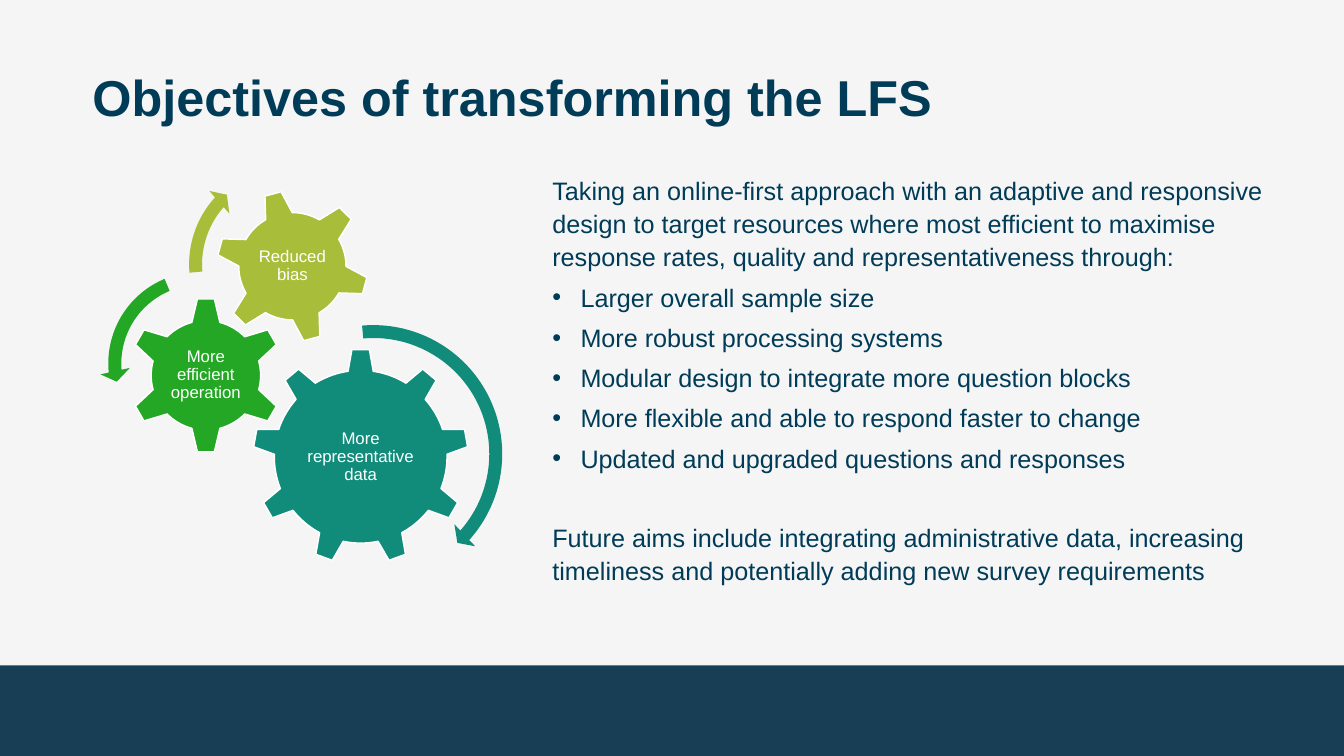
import pptx
import pptx.dml.color
import pptx.enum.shapes
import pptx.enum.text
import pptx.oxml.ns
import pptx.util
from lxml import etree

Cm = pptx.util.Cm
Pt = pptx.util.Pt
SHAPES = pptx.enum.shapes.MSO_SHAPE
ALIGN = pptx.enum.text.PP_ALIGN
ANCHOR = pptx.enum.text.MSO_ANCHOR

COLOURS = {
    "background": "F5F5F6",
    "footer": "183E56",
    "title": "003C57",
    "body": "003B57",
    "teal": "118C7B",
    "green": "23A724",
    "lime": "A8BD3A",
    "white": "FFFFFF",
}
INTRODUCTION = (
    "Taking an online-first approach with an adaptive and responsive design to target "
    "resources where most efficient to maximise response rates, quality and "
    "representativeness through:"
)
OBJECTIVES = [
    "Larger overall sample size",
    "More robust processing systems",
    "Modular design to integrate more question blocks",
    "More flexible and able to respond faster to change",
    "Updated and upgraded questions and responses",
]
FUTURE = (
    "Future aims include integrating administrative data, increasing timeliness and "
    "potentially adding new survey requirements"
)
GEARS = [
    ("More representative data", "teal", SHAPES.GEAR_9, (6.59, 7.61), 5.44, 0, (3.25, 2.79)),
    ("More efficient operation", "green", SHAPES.GEAR_6, (2.69, 5.56), 3.94, 0, (1.96, 1.96)),
    ("Reduced bias", "lime", SHAPES.GEAR_6, (4.87, 2.81), 3.86, 345, (2.16, 2.16)),
]
ARROWS = [
    ("teal", SHAPES.CIRCULAR_ARROW, (6.91, 7.54), 6.93, (0.047, 2.99, 24.99, 158.99, 0.055)),
    ("green", SHAPES.LEFT_CIRCULAR_ARROW, (2.54, 5.26), 5.05, (0.065, 4.3, 104.89, 148.38, 0.075)),
    ("lime", SHAPES.CIRCULAR_ARROW, (4.77, 2.76), 5.44, (0.06, 3.94, 133.14, 105.08, 0.07)),
]


def colour(name):
    """Return the named colour."""
    return pptx.dml.color.RGBColor.from_string(COLOURS[name])


def centred_box(box, centre, width, height):
    """Return the lengths of a rectangle centred on a point of the box."""
    left = box[0] + centre[0] - width / 2
    top = box[1] + centre[1] - height / 2
    return Cm(left), Cm(top), Cm(width), Cm(height)


def add_filled(slide, kind, lengths, fill, line=None):
    """Add a flat preset shape."""
    shape = slide.shapes.add_shape(kind, *lengths)
    shape.shadow.inherit = False
    shape.fill.solid()
    shape.fill.fore_color.rgb = colour(fill)
    if line:
        shape.line.color.rgb = colour(line)
        shape.line.width = Pt(1)
    else:
        shape.line.fill.background()
    return shape


def set_frame(frame, margin, anchor):
    """Set the wrapping, margins and anchor of a text frame."""
    frame.word_wrap = True
    frame.auto_size = pptx.enum.text.MSO_AUTO_SIZE.NONE
    frame.vertical_anchor = anchor
    frame.margin_left = frame.margin_right = Cm(margin)
    frame.margin_top = frame.margin_bottom = Cm(margin)


def format_paragraph(paragraph, size, name, spacing, after, align=ALIGN.LEFT, bold=False):
    """Set the spacing and font of a paragraph."""
    paragraph.alignment = align
    paragraph.line_spacing = spacing
    paragraph.space_before = Pt(0)
    paragraph.space_after = Pt(after)
    paragraph.font.name = "Arial"
    paragraph.font.size = Pt(size)
    paragraph.font.bold = bold
    paragraph.font.color.rgb = colour(name)


def set_bullet(paragraph, bulleted):
    """Give a paragraph a hanging bullet or none."""
    indent = Cm(0.71) if bulleted else 0
    properties = paragraph._p.get_or_add_pPr()
    properties.set("marL", str(indent))
    properties.set("indent", str(-indent))
    tag = pptx.oxml.ns.qn("a:buChar" if bulleted else "a:buNone")
    bullet = etree.SubElement(properties, tag)
    if bulleted:
        bullet.set("char", "•")


def place(shape, box):
    """Move a placeholder to a box."""
    shape.left, shape.top, shape.width, shape.height = map(Cm, box)


def fill_title(slide, box):
    """Write the title in its box."""
    title = slide.shapes.title
    place(title, box)
    set_frame(title.text_frame, 0, ANCHOR.TOP)
    title.text_frame.text = "Objectives of transforming the LFS"
    format_paragraph(title.text_frame.paragraphs[0], 36, "title", 0.95, 10, bold=True)


def fill_body(slide, box):
    """Write the introduction, the objectives and the future aims."""
    body = slide.placeholders[1]
    place(body, box)
    frame = body.text_frame
    set_frame(frame, 0, ANCHOR.TOP)
    frame.text = "\n".join([INTRODUCTION, *OBJECTIVES, FUTURE])
    for paragraph in frame.paragraphs:
        set_bullet(paragraph, paragraph.text in OBJECTIVES)
        format_paragraph(paragraph, 18, "body", 1.1, 5)
    frame.paragraphs[-1].space_before = Pt(28)


def add_gears(slide, box):
    """Draw the labelled gears and the arrows that turn around them."""
    for label, fill, kind, centre, size, rotation, label_size in GEARS:
        gear = add_filled(slide, kind, centred_box(box, centre, size, size), fill, "white")
        gear.rotation = rotation
        text = slide.shapes.add_textbox(*centred_box(box, centre, *label_size))
        set_frame(text.text_frame, 0.05, ANCHOR.MIDDLE)
        text.text_frame.text = label
        format_paragraph(text.text_frame.paragraphs[0], 12, "white", 0.9, 4, ALIGN.CENTER)
    for fill, kind, centre, size, adjustments in ARROWS:
        arrow = add_filled(slide, kind, centred_box(box, centre, size, size), fill)
        for index, value in enumerate(adjustments):
            arrow.adjustments[index] = value


def main():
    """Build and save the slide."""
    presentation = pptx.Presentation()
    presentation.slide_width = Cm(33.87)
    presentation.slide_height = Cm(19.05)
    slide = presentation.slides.add_slide(presentation.slide_layouts[1])
    slide.background.fill.solid()
    slide.background.fill.fore_color.rgb = colour("background")
    add_filled(slide, SHAPES.RECTANGLE, map(Cm, (0, 16.77, 33.87, 2.28)), "footer")
    fill_title(slide, (2.33, 1.78, 29.21, 1.47))
    add_gears(slide, (2.5, 3.9))
    fill_body(slide, (13.92, 4.34, 18.21, 10.49))
    presentation.save("out.pptx")


if __name__ == "__main__":
    main()
